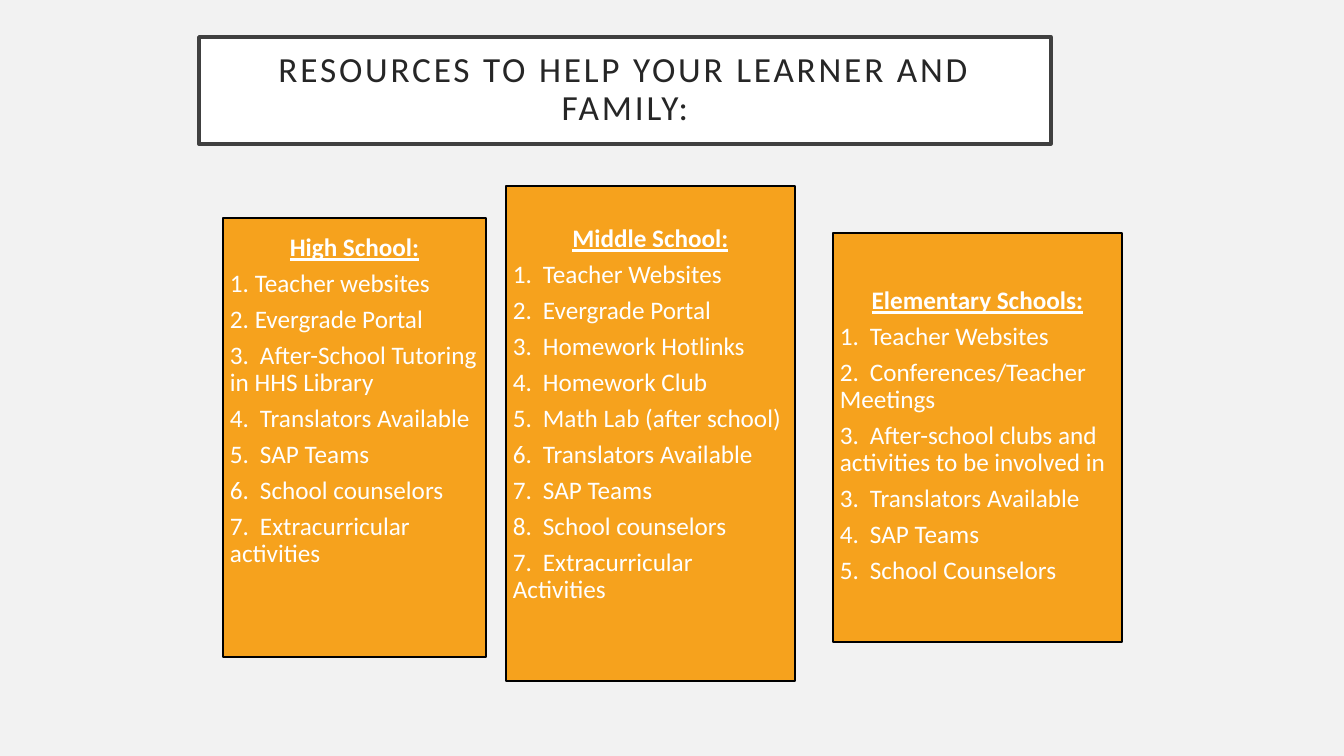
import lxml.etree
import pptx
import pptx.dml.color
import pptx.enum.shapes
import pptx.enum.text
import pptx.oxml.ns
import pptx.util

RGB = pptx.dml.color.RGBColor.from_string
Pt = pptx.util.Pt
ALIGN = pptx.enum.text.PP_ALIGN
ANCHOR = pptx.enum.text.MSO_ANCHOR
qn = pptx.oxml.ns.qn

THEME = {
    "font": "Calibri",
    "background": RGB("F2F2F2"),
    "title_fill": RGB("FFFFFF"),
    "title_line": RGB("404040"),
    "title_text": RGB("262626"),
    "card_fill": RGB("F6A21D"),
    "card_line": RGB("000000"),
    "card_text": RGB("FFFFFF"),
    "title_size": Pt(25.2),
    "card_size": Pt(18),
}
TAB = 30  # from the number to the item's text

# left, top, width, height, space above the heading, heading, items
SCHOOLS = [
    (223, 218, 263, 439, 17, "High School:", [
        "1. Teacher websites",
        "2. Evergrade Portal",
        "3.\tAfter-School Tutoring in HHS Library",
        "4.\tTranslators Available",
        "5.\tSAP Teams",
        "6.\tSchool counselors",
        "7.\tExtracurricular activities",
    ]),
    (506, 186, 289, 495, 40, "Middle School:", [
        "1.\tTeacher Websites",
        "2.\tEvergrade Portal",
        "3.\tHomework Hotlinks",
        "4.\tHomework Club",
        "5.\tMath Lab (after school)",
        "6.\tTranslators Available",
        "7.\tSAP Teams",
        "8.\tSchool counselors",
        "7.\tExtracurricular Activities",
    ]),
    (833, 233, 289, 409, 55, "Elementary Schools:", [
        "1.\tTeacher Websites",
        "2.\tConferences/Teacher Meetings",
        "3.\tAfter-school clubs and activities to be involved in",
        "3.\tTranslators Available",
        "4.\tSAP Teams",
        "5.\tSchool Counselors",
    ]),
]


def px(n):
    """Turn slide pixels (100.8 to the inch) into EMU."""
    return pptx.util.Emu(round(n * 914400 / 100.8))


def style_box(s, fill, line, width, margin):
    """Set fill, outline and side margins of a box, and wrap its text."""
    s.fill.solid()
    s.fill.fore_color.rgb = fill
    s.line.color.rgb = line
    s.line.width = Pt(width)
    tf = s.text_frame
    tf.word_wrap = True
    tf.auto_size = pptx.enum.text.MSO_AUTO_SIZE.NONE
    tf.margin_left = tf.margin_right = px(margin)
    tf.margin_top = tf.margin_bottom = px(margin)
    return tf


prs = pptx.Presentation()
prs.slide_width, prs.slide_height = px(1344), px(756)
slide = prs.slides.add_slide(prs.slide_layouts[5])
slide.background.fill.solid()
slide.background.fill.fore_color.rgb = THEME["background"]

title = slide.shapes.title
title.left, title.top, title.width, title.height = px(199), px(37), px(852), px(107)
tf = style_box(title, THEME["title_fill"], THEME["title_line"], 2.5, 20)
tf.vertical_anchor = ANCHOR.MIDDLE
p = tf.paragraphs[0]
p.alignment = ALIGN.CENTER
p.line_spacing = 0.9
p.font.name = THEME["font"]
p.font.size = THEME["title_size"]
p.font.color.rgb = THEME["title_text"]
r = p.add_run()
r.text = "RESOURCES TO HELP YOUR LEARNER AND FAMILY:"
r.font._element.set("spc", "200")

for left, top, width, height, space_above, heading, items in SCHOOLS:
    card = slide.shapes.add_shape(pptx.enum.shapes.MSO_SHAPE.RECTANGLE,
                                  px(left), px(top), px(width), px(height))
    card.shadow.inherit = False
    tf = style_box(card, THEME["card_fill"], THEME["card_line"], 1, 7)
    tf.margin_top = px(space_above)
    tf.vertical_anchor = ANCHOR.TOP
    for i, text in enumerate([heading] + items):
        is_heading = i == 0
        p = tf.paragraphs[0] if is_heading else tf.add_paragraph()
        p.alignment = ALIGN.CENTER if is_heading else ALIGN.LEFT
        p.line_spacing = 0.9
        p.space_after = Pt(6.2)
        if "\t" in text:
            tabs = lxml.etree.SubElement(p._p.get_or_add_pPr(), qn("a:tabLst"))
            lxml.etree.SubElement(tabs, qn("a:tab"), pos=str(px(TAB)), algn="l")
        p.font.name = THEME["font"]
        p.font.size = THEME["card_size"]
        p.font.color.rgb = THEME["card_text"]
        p.font.bold = p.font.underline = is_heading
        p.add_run().text = text

prs.save("out.pptx")
